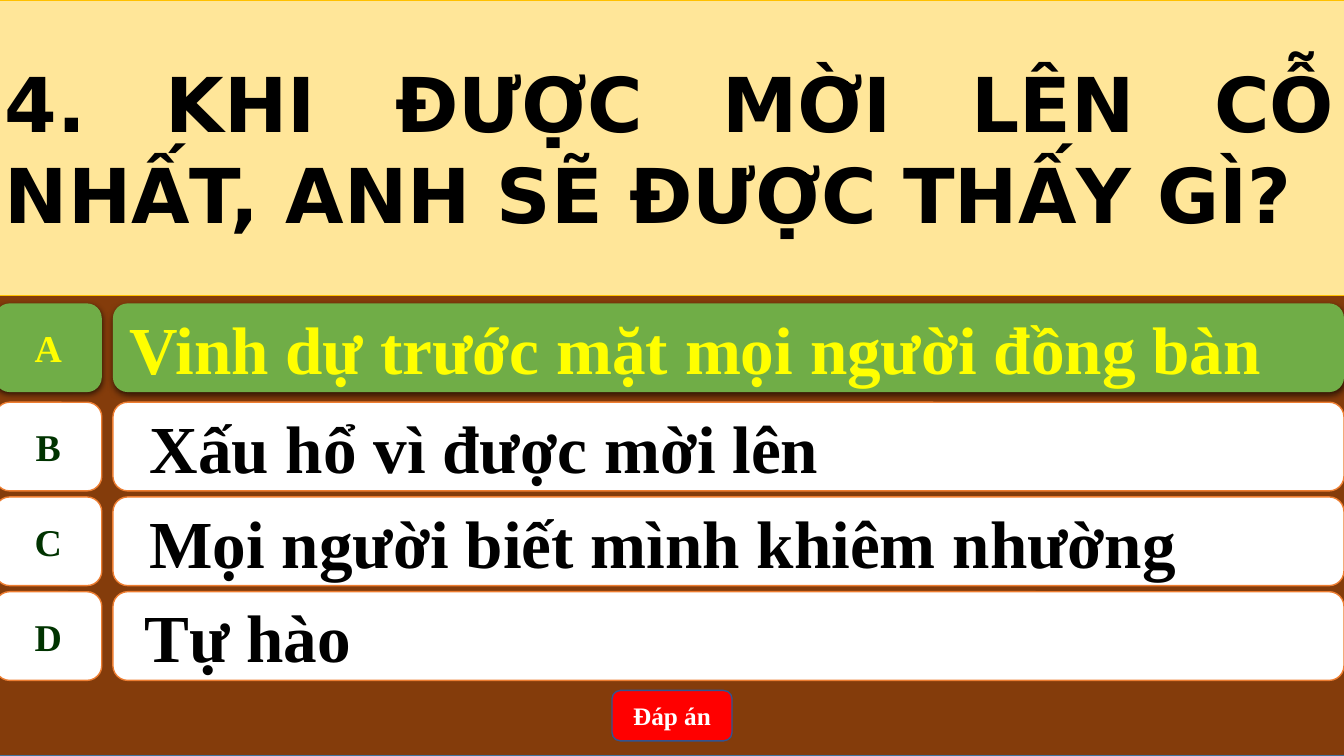
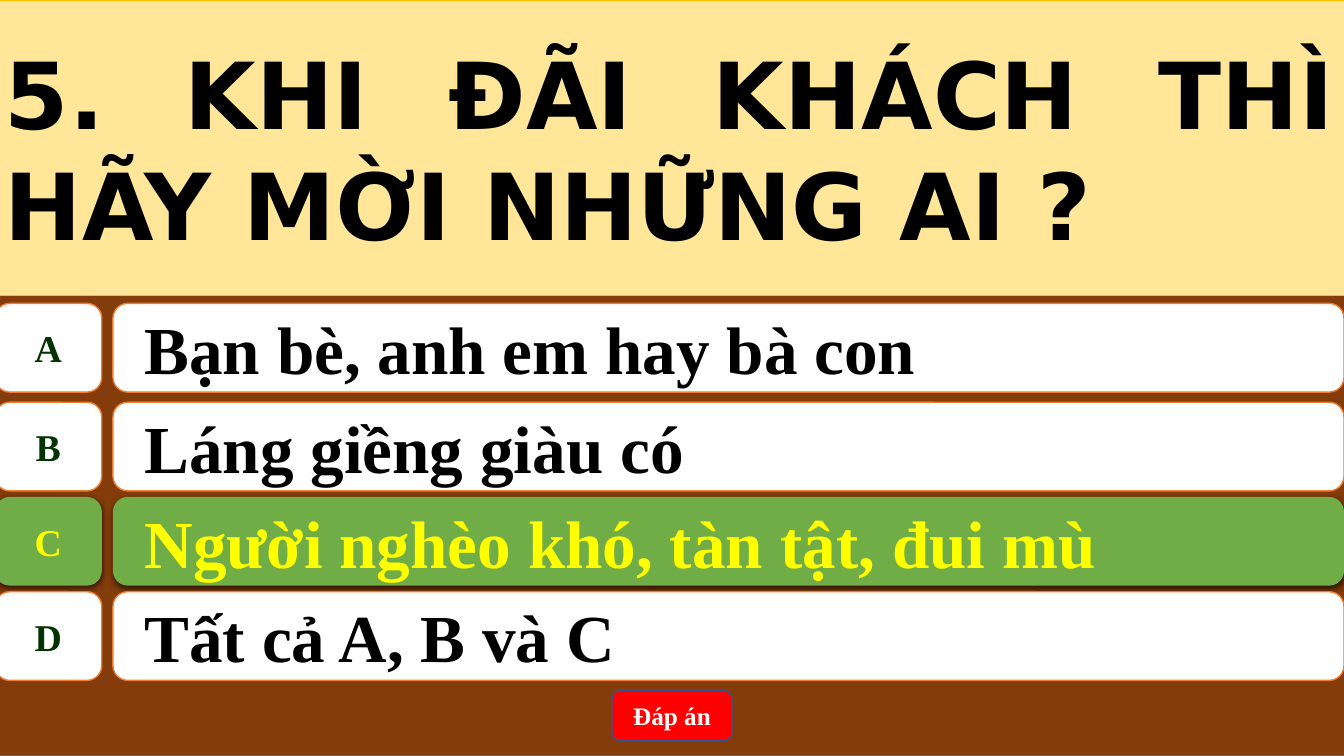
"""Build two quiz slides, each with a question, four choices and an answer button."""
from pptx import Presentation
from pptx.dml.color import RGBColor
from pptx.enum.shapes import MSO_SHAPE
from pptx.enum.text import MSO_ANCHOR, PP_ALIGN
from pptx.oxml import parse_xml
from pptx.oxml.ns import nsdecls, qn
from pptx.util import Inches, Pt

BLACK = RGBColor(0x00, 0x00, 0x00)
WHITE = RGBColor(0xFF, 0xFF, 0xFF)
BROWN = RGBColor(0x84, 0x3C, 0x0B)
STEEL = RGBColor(0x43, 0x73, 0x9E)
CREAM = RGBColor(0xFF, 0xE6, 0x99)
GOLD = RGBColor(0xFF, 0xC0, 0x00)
ORANGE = RGBColor(0xED, 0x7D, 0x31)
FOREST = RGBColor(0x00, 0x33, 0x00)
GREEN = RGBColor(0x70, 0xAD, 0x47)
YELLOW = RGBColor(0xFF, 0xFF, 0x00)
RED = RGBColor(0xFF, 0x00, 0x00)
NAVY = RGBColor(0x32, 0x54, 0x91)

SERIF = "Times New Roman"
SANS = "DejaVu Sans"
LEFT, WIDTH = -0.05, 13.39
TOPS = {"A": 3.01, "B": 3.99, "C": 4.93, "D": 5.87}
HEIGHT = 0.88
INSET = 0.1

QUIZ = [
    {
        "title": "4. KHI ĐƯỢC MỜI LÊN CỖ NHẤT, ANH SẼ ĐƯỢC THẤY GÌ?",
        "size": 54,
        "answer": "A",
        "rows": {
            "A": ("Vinh dự trước mặt mọi người đồng bàn", 0.02),
            "B": ("Xấu hổ vì được mời lên", 0.22),
            "C": ("Mọi người biết mình khiêm nhường", 0.22),
            "D": ("Tự hào", 0.17),
        },
    },
    {
        "title": "5. KHI ĐÃI KHÁCH THÌ HÃY MỜI NHỮNG AI ?",
        "size": 66,
        "answer": "C",
        "rows": {
            "A": ("Bạn bè, anh em hay bà con", 0.17),
            "B": ("Láng giềng giàu có", 0.17),
            "C": ("Người nghèo khó, tàn tật, đui mù", 0.17),
            "D": ("Tất cả A, B và C", 0.17),
        },
    },
]


class Deck:
    def __init__(self):
        self.prs = Presentation()
        self.prs.slide_width = Inches(13.33)
        self.prs.slide_height = Inches(7.5)
        self.slide = None

    def start(self):
        self.slide = self.prs.slides.add_slide(self.prs.slide_layouts[6])
        self.box(MSO_SHAPE.RECTANGLE, (LEFT, 0, WIDTH, 7.5), BROWN, STEEL)

    def box(self, kind, area, fill, line=None, weight=1):
        shape = self.slide.shapes.add_shape(kind, *map(Inches, area))
        shape.fill.solid()
        shape.fill.fore_color.rgb = fill
        if line is None:
            shape.line.fill.background()
        else:
            shape.line.color.rgb = line
            shape.line.width = Pt(weight)
        shape.shadow.inherit = False
        return shape

    def label(self, shape, text, size, color, align=PP_ALIGN.LEFT,
              font=SERIF, wrap=True, indent=0):
        frame = shape.text_frame
        layout = {
            "word_wrap": wrap,
            "vertical_anchor": MSO_ANCHOR.MIDDLE,
            "margin_left": Inches(INSET + indent),
        }
        for key, value in layout.items():
            setattr(frame, key, value)
        para = frame.paragraphs[0]
        para.alignment = align
        run = para.add_run()
        run.text = text
        for key, value in {"name": font, "size": Pt(size), "bold": True}.items():
            setattr(run.font, key, value)
        run.font.color.rgb = color

    def shade(self, shape):
        effect = shape._element.spPr.find(qn("a:effectLst"))
        effect.append(parse_xml(
            f'<a:outerShdw {nsdecls("a")} blurRad="{Pt(4.5)}" dist="{Pt(1.5)}" '
            'dir="5400000" algn="ctr" rotWithShape="0">'
            '<a:srgbClr val="000000"><a:alpha val="63000"/></a:srgbClr>'
            '</a:outerShdw>'))

    def title(self, text, size):
        band = self.box(MSO_SHAPE.RECTANGLE, (LEFT, 0, WIDTH, 2.93), CREAM, GOLD, 0.5)
        self.label(band, text, size, BLACK, PP_ALIGN.JUSTIFY, SANS)

    def choice(self, letter, text, indent, right):
        top = TOPS[letter]
        fill, line = (GREEN, None) if right else (WHITE, ORANGE)
        bar = self.box(MSO_SHAPE.ROUNDED_RECTANGLE, (1.12, top, 12.21, HEIGHT), fill, line)
        badge = self.box(MSO_SHAPE.FLOWCHART_ALTERNATE_PROCESS,
                         (LEFT, top, 1.06, HEIGHT), fill, line)
        self.label(bar, text, 48, YELLOW if right else BLACK, indent=indent)
        self.label(badge, letter, 27, YELLOW if right else FOREST,
                   PP_ALIGN.CENTER, wrap=False)
        if right:
            for shape in (bar, badge):
                self.shade(shape)

    def button(self, text):
        shape = self.box(MSO_SHAPE.ROUNDED_RECTANGLE, (6.07, 6.85, 1.19, 0.5), RED, NAVY)
        self.label(shape, text, 18, WHITE, PP_ALIGN.CENTER)


def main():
    deck = Deck()
    for item in QUIZ:
        deck.start()
        deck.title(item["title"], item["size"])
        for letter, (text, indent) in item["rows"].items():
            deck.choice(letter, text, indent, letter == item["answer"])
        deck.button("Đáp án")
    deck.prs.save("out.pptx")


if __name__ == "__main__":
    main()
